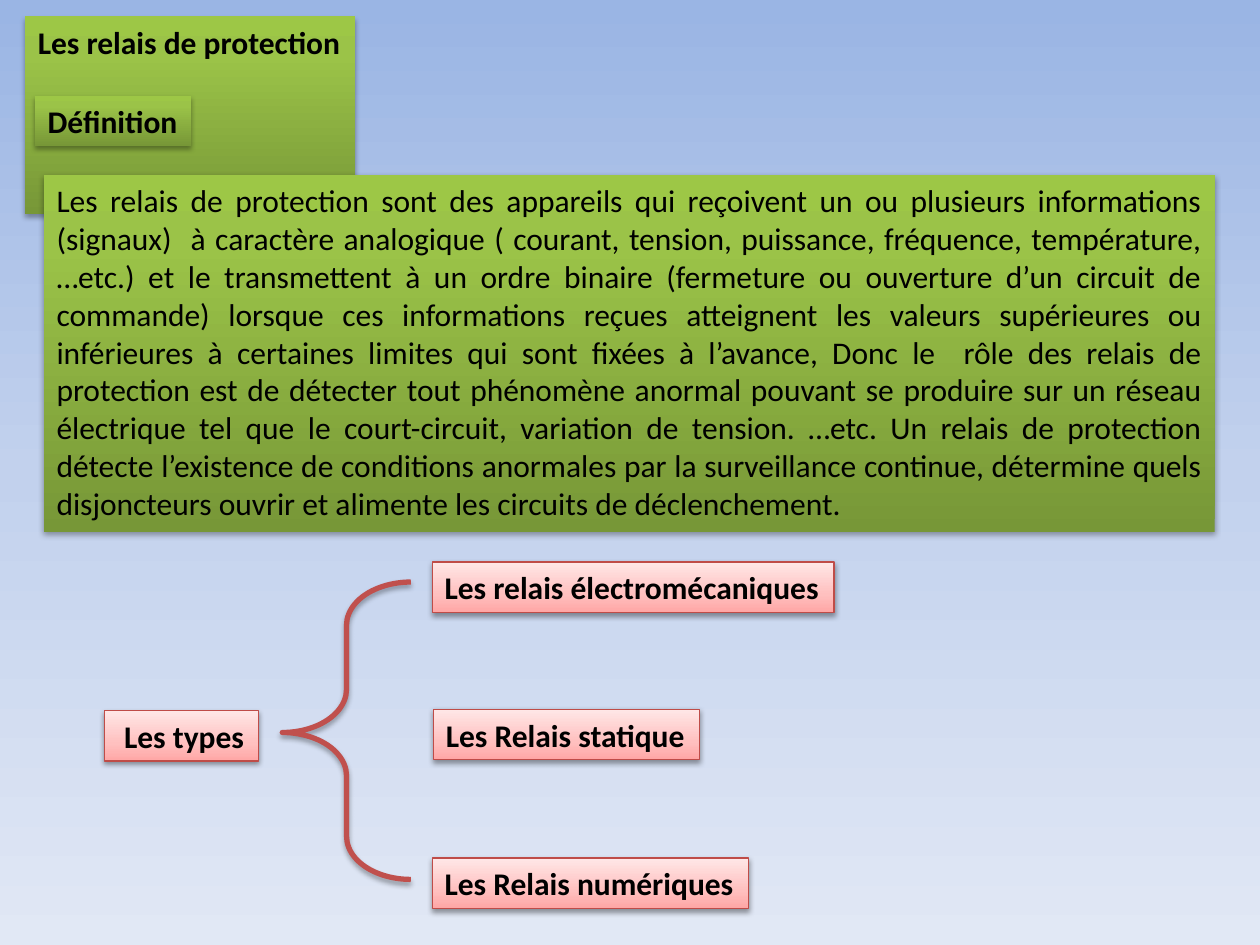
from copy import deepcopy

from lxml.etree import SubElement
from pptx import Presentation
from pptx.dml.color import RGBColor
from pptx.enum.shapes import MSO_SHAPE
from pptx.enum.text import MSO_ANCHOR, MSO_AUTO_SIZE, PP_ALIGN
from pptx.oxml.ns import qn
from pptx.util import Inches, Pt

BLACK = RGBColor(0x00, 0x00, 0x00)
BRACE_RED = RGBColor(0xC0, 0x50, 0x4D)
BORDER_RED = RGBColor(0xBF, 0x4C, 0x48)
BLUES = [(0, RGBColor(0x9A, 0xB5, 0xE4)), (0.5, RGBColor(0xC2, 0xD1, 0xED)),
         (1, RGBColor(0xE1, 0xE8, 0xF5))]
GREENS = [(0, RGBColor(0x77, 0x97, 0x37)), (0.8, RGBColor(0x9B, 0xC3, 0x48)),
          (1, RGBColor(0x9D, 0xC7, 0x46))]
PINKS = [(0, RGBColor(0xFF, 0xA6, 0xA5)), (0.35, RGBColor(0xFF, 0xC0, 0xBF)),
         (1, RGBColor(0xFF, 0xE7, 0xE7))]

DEFINITION = (
    "Les relais de protection sont des appareils qui reçoivent un ou plusieurs "
    "informations (signaux)  à caractère analogique ( courant, tension, puissance, "
    "fréquence, température, …etc.) et le transmettent à un ordre binaire (fermeture "
    "ou ouverture d’un circuit de commande) lorsque ces informations reçues "
    "atteignent les valeurs supérieures ou inférieures à certaines limites qui sont "
    "fixées à l’avance, Donc le  rôle des relais de protection est de détecter tout "
    "phénomène anormal pouvant se produire sur un réseau électrique tel que le "
    "court-circuit, variation de tension. …etc. Un relais de protection détecte "
    "l’existence de conditions anormales par la surveillance continue, détermine "
    "quels disjoncteurs ouvrir et alimente les circuits de déclenchement."
)
TYPES = [
    (" Les types", 0.83, 5.64, 1.22),
    ("Les relais électromécaniques", 3.43, 4.46, 3.19),
    ("Les Relais statique", 3.44, 5.63, 2.11),
    ("Les Relais numériques", 3.43, 6.81, 2.51),
]


def set_gradient(fill, element, colors, angle):
    """Fill with a three-stop linear gradient, angle counter-clockwise."""
    fill.gradient()
    fill.gradient_angle = angle
    stops = element.xpath(".//a:gsLst")[0]
    stops.append(deepcopy(stops[-1]))
    for stop, (position, color) in zip(fill.gradient_stops, colors):
        stop.position = position
        stop.color.rgb = color


def add_shadow(sp, alpha=35, distance=1.8):
    """Give a shape a soft black shadow below it."""
    sp.shadow.inherit = False
    effects = sp.element.spPr.find(qn("a:effectLst"))
    shadow = SubElement(effects, qn("a:outerShdw"), blurRad=str(Pt(3.1)),
                        dist=str(Pt(distance)), dir="5400000", rotWithShape="0")
    color = SubElement(shadow, qn("a:srgbClr"), val=str(BLACK))
    SubElement(color, qn("a:alpha"), val=str(alpha * 1000))


def format_box(sp, text, colors, bold=True, wrap=False, align=PP_ALIGN.LEFT):
    """Write the text of a box and style its gradient and font."""
    set_gradient(sp.fill, sp.element, colors, 90)
    tf = sp.text_frame
    tf.text = text
    tf.word_wrap = wrap
    tf.auto_size = MSO_AUTO_SIZE.SHAPE_TO_FIT_TEXT
    tf.vertical_anchor = MSO_ANCHOR.TOP
    p = tf.paragraphs[0]
    p.alignment = align
    p.font.name = "Calibri"
    p.font.size = Pt(18)
    p.font.bold = bold
    p.font.color.rgb = BLACK


def add_box(s, x, y, w, h=0.4):
    """Add an empty text box."""
    return s.shapes.add_textbox(Inches(x), Inches(y), Inches(w), Inches(h))


def add_title(s, text):
    """Place the slide title as a green label."""
    sp = s.shapes.title
    sp.left, sp.top = Inches(0.2), Inches(0.13)
    sp.width, sp.height = Inches(2.62), Inches(0.4)
    format_box(sp, text, GREENS)
    add_shadow(sp)


def add_type(s, text, x, y, w):
    """Add a pink outlined label."""
    sp = add_box(s, x, y, w)
    format_box(sp, text, PINKS)
    sp.line.color.rgb = BORDER_RED
    sp.line.width = Pt(0.75)
    add_shadow(sp, 38, 1.6)


def add_brace(s):
    """Add the brace that groups the relay types."""
    sp = s.shapes.add_shape(MSO_SHAPE.LEFT_BRACE, Inches(2.24), Inches(4.62),
                            Inches(1.02), Inches(2.36))
    sp.adjustments[0] = 0.336
    sp.adjustments[1] = 0.506
    sp.fill.background()
    sp.line.color.rgb = BRACE_RED
    sp.line.width = Pt(3)
    add_shadow(sp)


def main():
    """Build the slide and save it."""
    prs = Presentation()
    prs.slide_width, prs.slide_height = Inches(10), Inches(7.5)
    s = prs.slides.add_slide(prs.slide_layouts[5])
    set_gradient(s.background.fill, s.element, BLUES, 270)
    add_title(s, "Les relais de protection")

    heading = add_box(s, 0.28, 0.76, 1.24)
    format_box(heading, "Définition", GREENS)
    add_shadow(heading)
    body = add_box(s, 0.35, 1.39, 9.29, 2.83)
    format_box(body, DEFINITION, GREENS, False, True, PP_ALIGN.JUSTIFY)
    add_shadow(body)

    add_brace(s)
    for label in TYPES:
        add_type(s, *label)
    prs.save("out.pptx")


if __name__ == "__main__":
    main()
